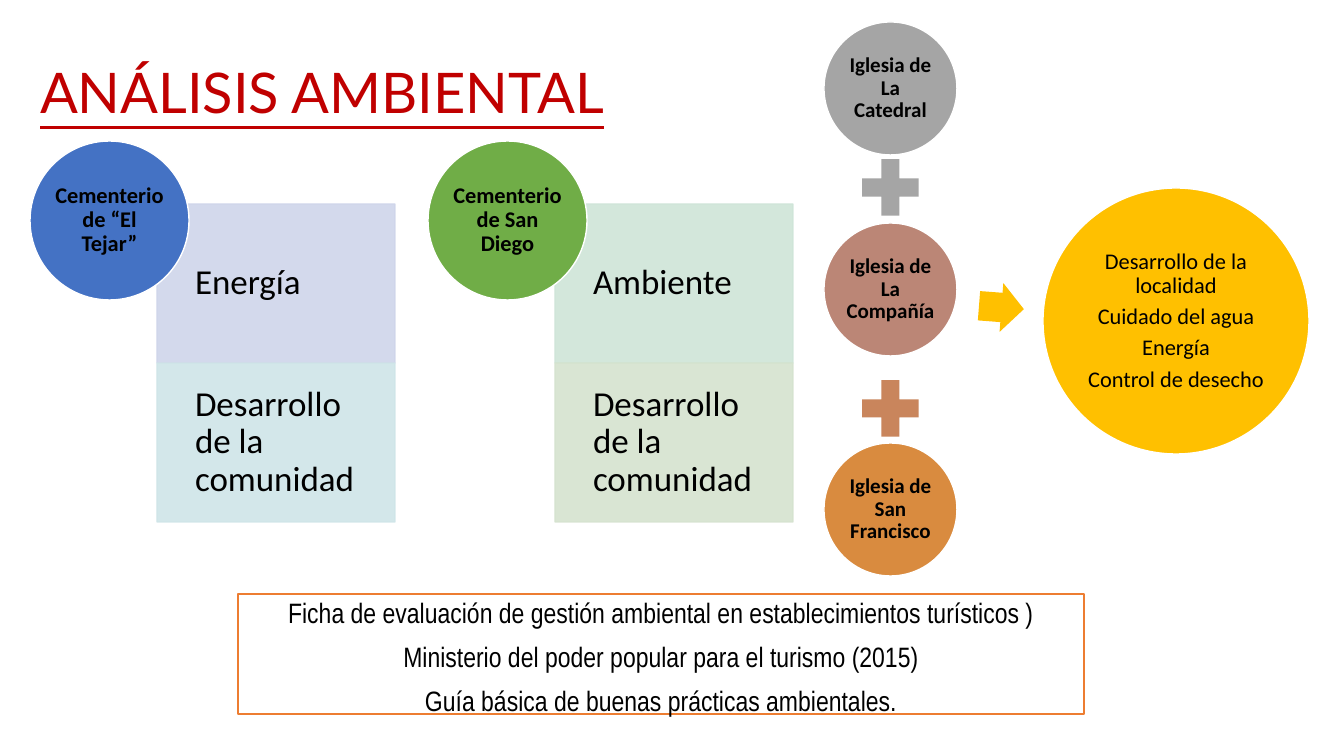
from lxml import etree
from pptx import Presentation, util as u
from pptx.dml.color import RGBColor
from pptx.enum import shapes, text
from pptx.oxml.ns import qn

TITLE = "ANÁLISIS AMBIENTAL"
# left edge, name, circle colour, (topic, panel colour) from top to bottom
CEMETERIES = [
    (30, "Cementerio de “El Tejar”", "4472C4",
     [("Energía", "CFD5EA"), ("Desarrollo de la comunidad", "CFE5E8")]),
    (428, "Cementerio de San Diego", "70AD47",
     [("Ambiente", "CFE5D8"), ("Desarrollo de la comunidad", "D5E3CF")]),
]
# top, name, colour
CHURCHES = [
    (22, "Iglesia de La Catedral", "A5A5A5"),
    (223, "Iglesia de La Compañía", "BB8676"),
    (443, "Iglesia de San Francisco", "D98B3F"),
]
PLUSES = [(149, "A5A5A5"), (370, "C9855C")]
RESULTS = ["Desarrollo de la localidad", "Cuidado del agua", "Energía",
           "Control de desecho"]
RESULT_COLOUR = "FFC000"
SOURCES = [
    "Ficha de evaluación de gestión ambiental en establecimientos turísticos )",
    "Ministerio del poder popular para el turismo (2015)",
    "Guía básica de buenas prácticas ambientales.",
]

EMU_PER_PX = 914400 / 100.8
CHURCH_LEFT, CHURCH_SIZE, PLUS_SIZE = 824, 133, 77
CEMETERY_TOP, CEMETERY_SIZE = 141, 159
PANEL_SHIFT, PANEL_TOP, PANEL_WIDTH, PANEL_HEIGHT = 127, 204, 238, 159
SHAPE = shapes.MSO_SHAPE
CENTER, LEFT = text.PP_ALIGN.CENTER, text.PP_ALIGN.LEFT
MIDDLE, TOP = text.MSO_ANCHOR.MIDDLE, text.MSO_ANCHOR.TOP


def px(length):
    return u.Emu(round(length * EMU_PER_PX))


def paint(fill, colour, opacity=100):
    fill.solid()
    fill.fore_color.rgb = RGBColor.from_string(colour)
    if opacity < 100:
        for tint in fill._xPr.iter(qn("a:srgbClr")):
            etree.SubElement(tint, qn("a:alpha"), val=str(opacity * 1000))


def add_block(kind, left, top, width, height, colour, line=None, opacity=100):
    block = slide.shapes.add_shape(kind, px(left), px(top), px(width), px(height))
    block.shadow.inherit = False
    paint(block.fill, colour, opacity)
    if line:
        block.line.width = u.Pt(1)
        paint(block.line.fill, line, opacity)
    else:
        block.line.fill.background()
    return block


def write(block, paragraphs, size, font="Calibri", colour="000000", bold=False,
          underline=False, align=CENTER, anchor=MIDDLE, gap=0, insets=(1, 1, 1, 1)):
    """Fill a shape with paragraphs; insets are left, top, right, bottom in px."""
    frame = block.text_frame
    frame.word_wrap = True
    frame.auto_size = text.MSO_AUTO_SIZE.NONE
    frame.vertical_anchor = anchor
    (frame.margin_left, frame.margin_top,
     frame.margin_right, frame.margin_bottom) = map(px, insets)
    frame.text = "\n".join(paragraphs)
    for paragraph in frame.paragraphs:
        paragraph.alignment = align
        paragraph.line_spacing = 0.9
        paragraph.space_before = u.Pt(gap)
        style = paragraph.runs[0].font
        style.name, style.size = font, u.Pt(size)
        style.bold, style.underline = bold, underline
        style.color.rgb = RGBColor.from_string(colour)


deck = Presentation()
deck.slide_width, deck.slide_height = px(1344), px(756)
slide = deck.slides.add_slide(deck.slide_layouts[5])

title = slide.shapes.title
title.left, title.top, title.width, title.height = map(px, (30, 22, 602, 146))
write(title, [TITLE], 40, font="Lato", colour="C00000", underline=True,
      align=LEFT, insets=(10, 5, 10, 5))

sources = add_block(SHAPE.RECTANGLE, 238, 594, 846, 120, "FFFFFF", line="ED7D31")
write(sources, SOURCES, 20, font="Arial Narrow", anchor=TOP, gap=10,
      insets=(10, 5, 10, 5))

for top, name, colour in CHURCHES:
    church = add_block(SHAPE.OVAL, CHURCH_LEFT, top, CHURCH_SIZE, CHURCH_SIZE,
                       colour, line="FFFFFF")
    write(church, [name], 15, bold=True)
for top, colour in PLUSES:
    add_block(SHAPE.MATH_PLUS, CHURCH_LEFT + (CHURCH_SIZE - PLUS_SIZE) / 2, top,
              PLUS_SIZE, PLUS_SIZE, colour)

arrow = add_block(SHAPE.RIGHT_ARROW, 979, 283, 45, 49, RESULT_COLOUR)
arrow.rotation = 4.4
arrow.adjustments[0], arrow.adjustments[1] = 0.6, 0.5
results = add_block(SHAPE.OVAL, 1043, 188, 266, 266, RESULT_COLOUR, line="FFFFFF")
write(results, RESULTS, 16, gap=5)

for left, name, colour, topics in CEMETERIES:
    for row, (topic, tint) in enumerate(topics):
        panel = add_block(SHAPE.RECTANGLE, left + PANEL_SHIFT,
                          PANEL_TOP + row * PANEL_HEIGHT, PANEL_WIDTH,
                          PANEL_HEIGHT, tint, line=tint, opacity=90)
        write(panel, [topic], 25, align=LEFT, insets=(38, 19, 19, 19))
    cemetery = add_block(SHAPE.OVAL, left, CEMETERY_TOP, CEMETERY_SIZE,
                         CEMETERY_SIZE, colour, line="FFFFFF")
    write(cemetery, [name], 16, bold=True, insets=(0, 0, 0, 0))

deck.save("out.pptx")
